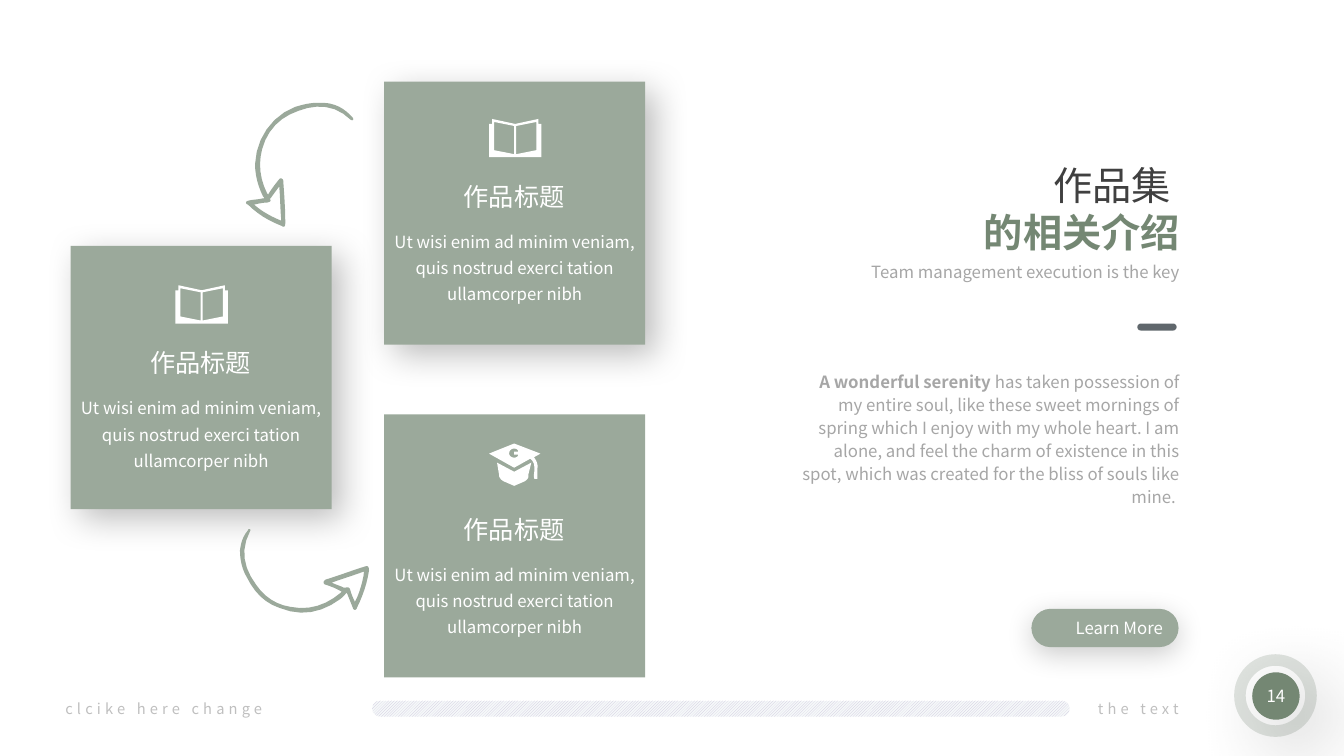
from dataclasses import dataclass
from pptx import Presentation
from pptx.dml.color import RGBColor
from pptx.enum import dml, shapes, text
from pptx.oxml import parse_xml
from pptx.oxml.ns import nsdecls, qn
from pptx.util import Inches, Pt


@dataclass(frozen=True)
class Theme:
    font: str = "Noto Sans CJK SC"
    sage: str = "9BA99B"
    green: str = "748773"
    slate: str = "60676C"
    dark: str = "404040"
    gray: str = "A6A6A6"
    pale: str = "BFBFBF"
    white: str = "FFFFFF"
    stripe: str = "CCC3DB"
    stripe_back: str = "F5F8F9"
    heading: float = 28
    card_title: float = 18
    body: float = 12
    footer: float = 10.5


THEME = Theme()
HEADING = [[("作品集 ", {"color": THEME.dark})], [("的相关介绍", {"bold": True})]]
SUBTITLE = "Team management execution is the key"
STORY = [[
    ("A wonderful serenity ", {"bold": True}),
    ("has taken possession of my entire soul, like these sweet mornings of spring which I enjoy "
     "with my whole heart. I am alone, and feel the charm of existence in this spot, which was "
     "created for the bliss of souls like mine. ", {}),
]]
CARD_TITLE = "作品标题"
CARD_BODY = "Ut wisi enim ad minim veniam, quis nostrud exerci tation ullamcorper nibh"
BUTTON = "Learn More"
PAGE = "14"
FOOTER_LEFT, FOOTER_RIGHT = "clcike here change", "the text"

BOOK = [
    [(0, .05), (.03, .05), (.03, 0), (.26, .05), (.49, 0), (.49, .05), (.52, .05), (.52, .38), (0, .38)],
    [(.05, .03), (.25, .07), (.25, .35), (.05, .31)],
    [(.27, .07), (.47, .03), (.47, .31), (.27, .35)],
]
CAP = [
    [(.08, .19), (.25, .28), (.42, .19), (.39, .31), (.39, .31, .41, .36, .32, .39), (.25, .42),
     (.18, .39), (.09, .36, .1, .31, .1, .31)],
    [(.25, .05), (.22, .05, .2, .07, .2, .1), (.2, .12, .22, .14, .25, .14),
     (.27, .14, .29, .13, .29, .11), (.27, .11, .25, .11, .25, .11), (.25, .08),
     (.25, .08, .27, .08, .29, .08), (.29, .06, .27, .05, .25, .05)],
    [(.25, 0), (.51, .1), (.44, .14), (.44, .14, .44, .14, .45, .14), (.47, .17, .49, .21, .48, .25),
     (.48, .26, .48, .27, .48, .27), (.48, .29, .48, .31, .48, .35), (.45, .35),
     (.44, .32, .45, .29, .45, .27), (.45, .26, .45, .26, .45, .25), (.45, .22, .45, .19, .42, .16),
     (.42, .16, .42, .16, .41, .15), (.25, .24), (0, .1)],
]
ARROW_DOWN = [
    [(2.77, 1.85), (2.74, 1.89, 2.71, 1.93, 2.69, 1.96), (2.68, 1.97, 2.68, 1.97, 2.68, 1.98),
     (2.69, 2, 2.68, 2, 2.65, 2.01), (2.61, 2.01, 2.57, 2.02, 2.52, 2.03),
     (2.6, 2.1, 2.69, 2.15, 2.79, 2.19), (2.78, 2.08, 2.78, 1.97, 2.77, 1.85)],
    [(3.15, 1.02), (3.19, 1.02, 3.24, 1.02, 3.28, 1.03), (3.37, 1.05, 3.44, 1.1, 3.5, 1.17),
     (3.5, 1.18, 3.51, 1.18, 3.5, 1.19), (3.49, 1.2, 3.49, 1.19, 3.48, 1.19),
     (3.33, 1.04, 3.14, 1.03, 2.96, 1.1), (2.78, 1.16, 2.65, 1.29, 2.6, 1.48),
     (2.56, 1.63, 2.58, 1.78, 2.65, 1.92), (2.65, 1.92, 2.65, 1.92, 2.66, 1.93),
     (2.69, 1.88, 2.72, 1.84, 2.76, 1.79), (2.77, 1.78, 2.77, 1.77, 2.79, 1.77),
     (2.81, 1.78, 2.81, 1.79, 2.81, 1.8), (2.82, 1.94, 2.83, 2.08, 2.83, 2.21),
     (2.83, 2.25, 2.82, 2.26, 2.79, 2.24), (2.66, 2.19, 2.55, 2.12, 2.46, 2.03),
     (2.45, 2.03, 2.44, 2.02, 2.44, 2.01), (2.44, 2, 2.46, 1.99, 2.47, 1.99),
     (2.51, 1.98, 2.56, 1.98, 2.6, 1.97), (2.63, 1.97, 2.62, 1.96, 2.61, 1.95),
     (2.56, 1.85, 2.53, 1.74, 2.53, 1.63), (2.54, 1.38, 2.69, 1.15, 2.93, 1.06),
     (3, 1.04, 3.07, 1.02, 3.15, 1.02)],
]
ARROW_RIGHT = [
    [(3.61, 5.67), (3.5, 5.71, 3.4, 5.74, 3.29, 5.78), (3.33, 5.8, 3.37, 5.81, 3.41, 5.83),
     (3.42, 5.83, 3.42, 5.83, 3.43, 5.83), (3.45, 5.82, 3.46, 5.83, 3.47, 5.84),
     (3.48, 5.88, 3.5, 5.93, 3.52, 5.97), (3.56, 5.91, 3.61, 5.73, 3.61, 5.67)],
    [(2.47, 5.25), (2.48, 5.25, 2.48, 5.25, 2.48, 5.25), (2.49, 5.26, 2.48, 5.27, 2.48, 5.27),
     (2.38, 5.46, 2.42, 5.64, 2.54, 5.8), (2.62, 5.92, 2.74, 6, 2.88, 6.02),
     (3.07, 6.06, 3.24, 6, 3.38, 5.88), (3.38, 5.88, 3.39, 5.87, 3.39, 5.87),
     (3.34, 5.84, 3.29, 5.82, 3.23, 5.8), (3.22, 5.8, 3.21, 5.79, 3.21, 5.78),
     (3.21, 5.76, 3.22, 5.76, 3.23, 5.75), (3.36, 5.71, 3.49, 5.66, 3.62, 5.62),
     (3.65, 5.61, 3.66, 5.62, 3.66, 5.66), (3.64, 5.79, 3.6, 5.91, 3.54, 6.03),
     (3.54, 6.04, 3.53, 6.05, 3.52, 6.05), (3.51, 6.05, 3.5, 6.04, 3.5, 6.03),
     (3.48, 5.98, 3.46, 5.93, 3.44, 5.88), (3.42, 5.9, 3.4, 5.92, 3.38, 5.94),
     (3.19, 6.08, 2.99, 6.12, 2.77, 6.03), (2.62, 5.98, 2.52, 5.87, 2.45, 5.73),
     (2.4, 5.65, 2.38, 5.55, 2.38, 5.46), (2.39, 5.38, 2.41, 5.32, 2.46, 5.26),
     (2.46, 5.25, 2.47, 5.25, 2.47, 5.25)],
]
CARD_SHADOW = (25, 25, 10, 45)
CARDS = [
    (3.81, .81, .81, BOOK, .37, CARD_SHADOW),
    (3.81, 4.11, 4.11, CAP, .29, None),
    (.7, 2.44, 2.46, BOOK, .37, CARD_SHADOW),
]
CARD_W, CARD_H = 2.59, 2.61
ALIGN = text.PP_ALIGN


def write(frame, content, size=THEME.body, color=THEME.white, align=ALIGN.LEFT, line=1.0,
          before=0, spacing=None, wrap=True, anchor=text.MSO_ANCHOR.TOP):
    frame.word_wrap, frame.vertical_anchor = wrap, anchor
    frame.auto_size = text.MSO_AUTO_SIZE.NONE
    lines = [[(content, {})]] if isinstance(content, str) else content
    for index, runs in enumerate(lines):
        paragraph = frame.add_paragraph() if index else frame.paragraphs[0]
        paragraph.alignment, paragraph.line_spacing = align, line
        paragraph.space_before = Pt(before)
        for words, style in runs:
            run = paragraph.add_run()
            run.text = words
            run.font.size, run.font.name = Pt(size), THEME.font
            run.font.bold = style.get("bold", False)
            run.font.color.rgb = RGBColor.from_string(style.get("color", color))
            props = run.font._element
            props.append(parse_xml(f'<a:ea {nsdecls("a")} typeface="{THEME.font}"/>'))
            if spacing:
                props.set("spc", str(spacing * 100))


def paint(shape, color, shadow=None, alpha=None):
    shape.shadow.inherit = False
    shape.line.fill.background()
    shape.fill.solid()
    shape.fill.fore_color.rgb = RGBColor.from_string(color)
    props = shape._element.spPr
    if alpha:
        props.find(".//" + qn("a:srgbClr")).append(
            parse_xml(f'<a:alpha {nsdecls("a")} val="{alpha * 1000}"/>'))
    if shadow:
        opacity, blur, distance, angle = shadow
        props.find(qn("a:effectLst")).append(parse_xml(
            f'<a:outerShdw {nsdecls("a")} blurRad="{Pt(blur)}" dist="{Pt(distance)}" '
            f'dir="{angle * 60000}" algn="ctr" rotWithShape="0"><a:srgbClr val="000000">'
            f'<a:alpha val="{opacity * 1000}"/></a:srgbClr></a:outerShdw>'))
    return shape


def place(shape, *box):
    shape.left, shape.top, shape.width, shape.height = map(Inches, box)
    return shape.text_frame


def preset(kind, box, color, adjust=None, **look):
    shape = slide.shapes.add_shape(kind, *map(Inches, box))
    if adjust is not None:
        shape.adjustments[0] = adjust
    return paint(shape, color, **look)


def label(box, content, **style):
    write(slide.shapes.add_textbox(*map(Inches, box)).text_frame, content, **style)


def trace(contour, left, top, steps=6):
    points = [contour[0]]
    for step in contour[1:]:
        if len(step) == 2:
            points.append(step)
            continue
        knots = [points[-1], step[:2], step[2:4], step[4:]]
        for t in (n / steps for n in range(1, steps + 1)):
            weights = ((1 - t) ** 3, 3 * t * (1 - t) ** 2, 3 * t * t * (1 - t), t ** 3)
            points.append(tuple(sum(w * k[axis] for w, k in zip(weights, knots)) for axis in (0, 1)))
    return [(Inches(left + x), Inches(top + y)) for x, y in points]


def outline(contours, color, left=0, top=0):
    paths = [trace(contour, left, top) for contour in contours]
    builder = slide.shapes.build_freeform(*paths[0][0])
    for index, points in enumerate(paths):
        if index:
            builder.move_to(*points[0])
        builder.add_line_segments(points[1:], close=True)
    paint(builder.convert_to_shape(), color)


deck = Presentation()
deck.slide_width, deck.slide_height = Inches(13.33), Inches(7.5)
slide = deck.slides.add_slide(deck.slide_layouts[1])
PRESET = shapes.MSO_SHAPE

write(place(slide.shapes.title, 8.43, 1.55, 3.37, 1.04), HEADING,
      size=THEME.heading, color=THEME.green, align=ALIGN.RIGHT)
label((8.3, 2.55, 3.5, .3), SUBTITLE, color=THEME.gray, align=ALIGN.RIGHT)
story = place(slide.placeholders[1], 7.83, 3.61, 3.97, 1.46)
write(story, STORY, color=THEME.gray, align=ALIGN.RIGHT, line=1.14, before=10)
story_props = story.paragraphs[0]._p.get_or_add_pPr()
story_props.set("marL", "0")
story_props.set("indent", "0")
story_props.append(parse_xml(f'<a:buNone {nsdecls("a")}/>'))

button = preset(PRESET.ROUNDED_RECTANGLE, (10.23, 6.04, 1.46, .38), THEME.sage, .5, shadow=(20, 20, 5, 90))
write(button.text_frame, BUTTON, align=ALIGN.RIGHT, anchor=text.MSO_ANCHOR.MIDDLE)
preset(PRESET.ROUNDED_RECTANGLE, (11.28, 3.21, .39, .07), THEME.slate, .5)

preset(PRESET.DONUT, (12.24, 6.49, .82, .82), THEME.green, .14, alpha=22)
preset(PRESET.OVAL, (12.42, 6.67, .47, .47), THEME.green, shadow=(40, 59, 21, 45))
label((12.32, 6.75, .67, .3), PAGE, align=ALIGN.CENTER)

for left, top, inner, icon, icon_drop, shadow in CARDS:
    preset(PRESET.RECTANGLE, (left, top, CARD_W, CARD_H), THEME.sage, shadow=shadow)
    outline(icon, THEME.white, left + 1.04, inner + icon_drop)
    label((left + .69, inner + .94, 1.2, .4), CARD_TITLE, size=THEME.card_title,
          align=ALIGN.CENTER, wrap=False)
    label((left - .01, inner + 1.38, 2.61, .89), CARD_BODY, align=ALIGN.CENTER, line=1.3)
for arrow in (ARROW_DOWN, ARROW_RIGHT):
    outline(arrow, THEME.sage)

footer = {"size": THEME.footer, "color": THEME.pale, "spacing": 3}
label((10.66, 6.89, 1.13, .28), FOOTER_RIGHT, align=ALIGN.RIGHT, **footer)
label((.55, 6.89, 2.3, .28), FOOTER_LEFT, **footer)
stripes = preset(PRESET.ROUNDED_RECTANGLE, (3.69, 6.95, 6.92, .16), THEME.stripe, .5)
stripes.fill.patterned()
stripes.fill.pattern = dml.MSO_PATTERN.LIGHT_UPWARD_DIAGONAL
stripes.fill.fore_color.rgb = RGBColor.from_string(THEME.stripe)
stripes.fill.back_color.rgb = RGBColor.from_string(THEME.stripe_back)

deck.save("out.pptx")
